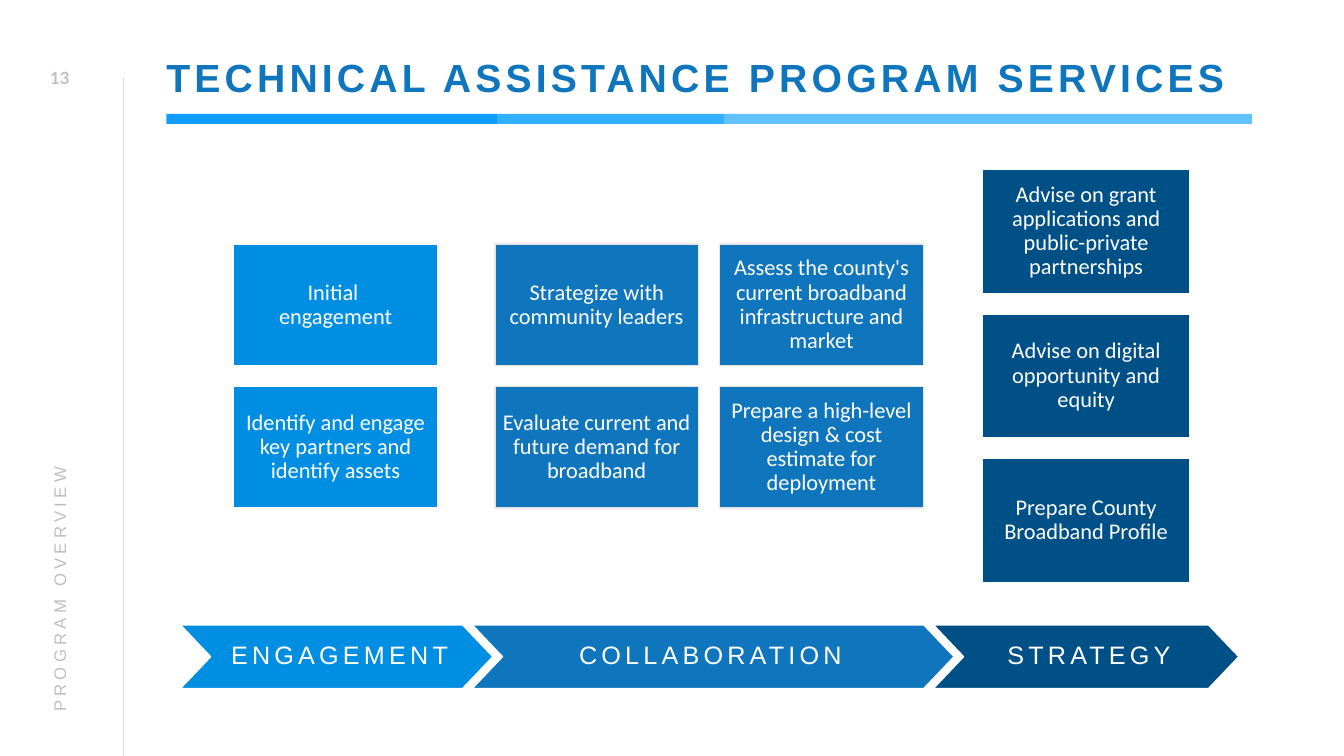
from lxml import etree
from pptx import Presentation
from pptx.dml.color import RGBColor
from pptx.enum.shapes import MSO_CONNECTOR, MSO_SHAPE
from pptx.enum.text import MSO_ANCHOR, PP_ALIGN
from pptx.oxml.ns import qn
from pptx.util import Pt

RECTANGLE, CHEVRON = MSO_SHAPE.RECTANGLE, MSO_SHAPE.CHEVRON
STRAIGHT = MSO_CONNECTOR.STRAIGHT
MIDDLE = MSO_ANCHOR.MIDDLE
LEFT, CENTER = PP_ALIGN.LEFT, PP_ALIGN.CENTER

LIGHT, MEDIUM, DARK = "008EE3", "0F75BC", "005088"
WHITE, GREY, PALE = "FFFFFF", "BFBFBF", "E7E6E6"

ENGAGEMENT = [["Initial \nengagement"],
              ["Identify and engage key partners and identify assets"]]
COLLABORATION = [
    ["Strategize with community leaders",
     "Assess the county's current broadband infrastructure and market"],
    ["Evaluate current and future demand for broadband",
     "Prepare a high-level design & cost estimate for deployment"]]
STRATEGY = [["Advise on grant applications and public-private partnerships"],
            ["Advise on digital opportunity and equity"],
            ["Prepare County Broadband Profile"]]
PHASES = [("ENGAGEMENT", 223.2, LIGHT), ("COLLABORATION ", 344.2, MEDIUM),
          ("STRATEGY", 218.2, DARK)]
TITLE_BARS = [(236.2, "119DFF"), (162, "31B2FF"), (377.2, "62C1FF")]


def color(hex_value):
    """Turn a hex string into a colour."""
    return RGBColor.from_string(hex_value)


def write(shape, text, font, size, hex_value, align=CENTER, insets=(7.2, 3.6, 7.2, 3.6),
          bold=False, tracking=0, line_spacing=1.0):
    """Write one paragraph, with its line breaks, into a shape."""
    frame = shape.text_frame
    frame.word_wrap = True
    frame.vertical_anchor = MIDDLE
    (frame.margin_left, frame.margin_top,
     frame.margin_right, frame.margin_bottom) = map(Pt, insets)
    paragraph = frame.paragraphs[0]
    paragraph.alignment = align
    paragraph.line_spacing = line_spacing
    for index, line in enumerate(text.split("\n")):
        if index:
            paragraph.add_line_break()
        run = paragraph.add_run()
        run.text = line
        run.font.name, run.font.size, run.font.bold = font, Pt(size), bold
        run.font.color.rgb = color(hex_value)
        if tracking:
            run.font._element.set("spc", str(tracking * 100))


def add_block(slide, kind, box, fill, outline=None):
    """Add a flat filled shape, with an outline if one is given."""
    block = slide.shapes.add_shape(kind, *map(Pt, box))
    block.shadow.inherit = False
    block.fill.solid()
    block.fill.fore_color.rgb = color(fill)
    if outline:
        block.line.color.rgb = color(outline)
        block.line.width = Pt(1)
    else:
        block.line.fill.background()
    return block


def add_sidebar(slide, left, top, width, height):
    """Add the page number, the section name and the dividing line."""
    edge = Pt(left + width)
    divider = slide.shapes.add_connector(STRAIGHT, edge, Pt(top + height), edge, Pt(top + 55.4))
    divider.line.color.rgb = color("D9D9D9")
    divider.line.width = Pt(0.5)
    etree.SubElement(divider._element.spPr, qn("a:effectLst"))

    section = slide.shapes.add_textbox(Pt(left - 174.2), Pt(top + 284.4), Pt(433.4), Pt(28.8))
    section.rotation = 270
    write(section, "PROGRAM OVERVIEW", "Arial", 12, GREY, align=LEFT, tracking=3)

    page_number = slide.shapes.add_textbox(Pt(left + 19.4), Pt(top + 41), Pt(46.8), Pt(28.8))
    write(page_number, "13", "Lato", 12, GREY, bold=True)


def add_heading(slide, left, top, width, height):
    """Add the title with its three-part bar underneath."""
    title = slide.shapes.add_textbox(Pt(left), Pt(top), Pt(width), Pt(height))
    write(title, "TECHNICAL ASSISTANCE PROGRAM SERVICES", "Arial", 28, MEDIUM, align=LEFT,
          insets=(0, 3.6, 0, 0), bold=True, tracking=3, line_spacing=0.9)
    for bar_width, fill in TITLE_BARS:
        add_block(slide, RECTANGLE, (left, top + height - 0.7, bar_width, 7.2), fill)
        left += bar_width


def add_services(slide, left, top, width, height, rows, gaps, fill, outline, inset):
    """Add a grid of service boxes, each of the given width and height."""
    for row, services in enumerate(rows):
        for column, service in enumerate(services):
            box = (left + column * (width + gaps[0]), top + row * (height + gaps[1]),
                   width, height)
            write(add_block(slide, RECTANGLE, box, fill, outline), service, "Calibri", 16,
                  WHITE, insets=(inset,) * 4, line_spacing=0.9)


def add_phases(slide, left, top, height, overlap, point):
    """Add the row of interlocking phase chevrons."""
    for phase, width, fill in PHASES:
        chevron = add_block(slide, CHEVRON, (left, top, width, height), fill, WHITE)
        chevron.adjustments[0] = point / height
        write(chevron, phase, "Arial", 18, WHITE, insets=(7.2, 2.2, 2.9, 2.2),
              tracking=3, line_spacing=0.9)
        left += width - overlap


def main():
    """Build the slide and save it."""
    presentation = Presentation()
    presentation.slide_width, presentation.slide_height = Pt(960), Pt(540)
    slide = presentation.slides.add_slide(presentation.slide_layouts[6])
    add_sidebar(slide, 0, 0, 88, 540)
    add_heading(slide, 118.8, 28.8, 775, 53.3)
    gaps = (15.2, 14.6)
    add_services(slide, 167, 174.2, 145.4, 87.1, ENGAGEMENT, gaps, LIGHT, WHITE, 5)
    add_services(slide, 353.5, 174.2, 145.4, 87.1, COLLABORATION, gaps, MEDIUM, PALE, 5)
    add_phases(slide, 128.9, 446.4, 45.4, 14.8, 21.6)
    add_services(slide, 702, 121, 147.6, 88.6, STRATEGY, gaps, DARK, WHITE, 14.4)
    presentation.save("out.pptx")


if __name__ == "__main__":
    main()
